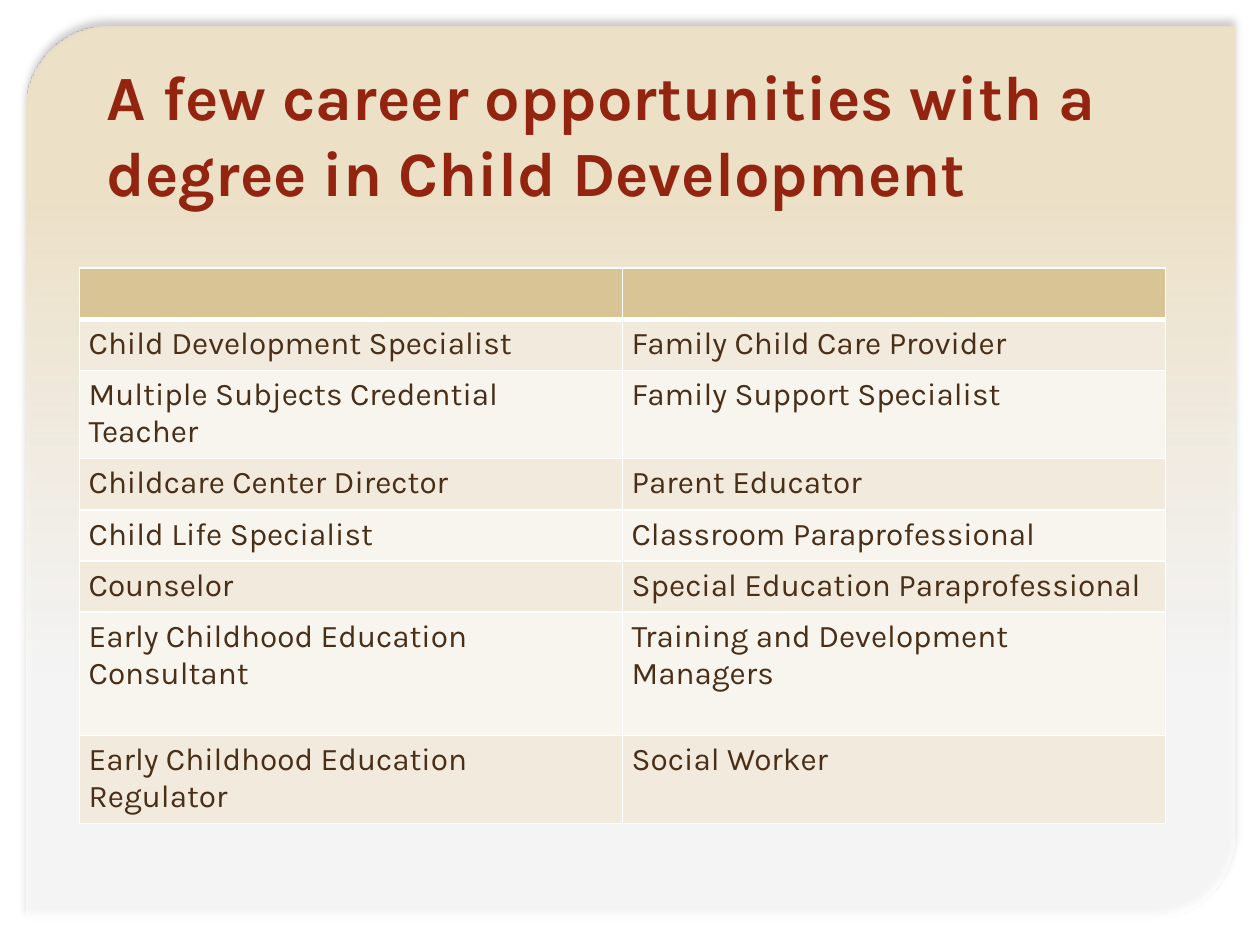
"""Build the slide of career opportunities for a Child Development degree."""
from typing import NamedTuple

import pptx
import pptx.dml.color
import pptx.enum.shapes
import pptx.enum.text
import pptx.oxml
import pptx.oxml.ns
import pptx.util

Pt = pptx.util.Pt
FONT = "Karla"
NAMESPACE = pptx.oxml.ns.nsdecls("a")
HEADER_FILL = "D9C495"
BAND_FILLS = ("F1EADD", "F8F5EF")


class CareerRow(NamedTuple):
    left: str
    right: str
    height: float = 29.25


CAREERS = [
    CareerRow("Child Development Specialist", "Family Child Care Provider"),
    CareerRow("Multiple Subjects Credential Teacher", "Family Support Specialist", 49.5),
    CareerRow("Childcare Center Director", "Parent Educator"),
    CareerRow("Child Life Specialist", "Classroom Paraprofessional"),
    CareerRow("Counselor", "Special Education Paraprofessional"),
    CareerRow("Early Childhood Education Consultant", "Training and Development Managers", 70.5),
    CareerRow("Early Childhood Education Regulator", "Social Worker", 49.5),
]


def color(value: str) -> pptx.dml.color.RGBColor:
    return pptx.dml.color.RGBColor.from_string(value)


def style_font(paragraph, size: float, value: str, bold: bool = False) -> None:
    paragraph.font.name = FONT
    paragraph.font.size = Pt(size)
    paragraph.font.bold = bold
    paragraph.font.color.rgb = color(value)


def add_panel(slide) -> None:
    panel = slide.shapes.add_shape(
        pptx.enum.shapes.MSO_SHAPE.ROUND_2_DIAG_RECTANGLE,
        Pt(15.12), Pt(15.12), Pt(690.5), Pt(510.5))
    panel.adjustments[0] = 0.094
    panel.adjustments[1] = 0
    panel.line.fill.background()
    properties = panel._element.spPr
    gradient = pptx.oxml.parse_xml(
        f'<a:gradFill {NAMESPACE} rotWithShape="1"><a:gsLst>'
        '<a:gs pos="19000"><a:srgbClr val="ECE0C6"/></a:gs>'
        '<a:gs pos="73000"><a:srgbClr val="FFFFFF"><a:alpha val="67000"/></a:srgbClr></a:gs>'
        '</a:gsLst><a:lin ang="5400000" scaled="0"/></a:gradFill>')
    properties.find(pptx.oxml.ns.qn("a:prstGeom")).addnext(gradient)
    properties.append(pptx.oxml.parse_xml(
        f'<a:effectLst {NAMESPACE}><a:outerShdw blurRad="{Pt(4.2)}" dist="{Pt(3)}" '
        'dir="16200000" algn="tl" rotWithShape="0"><a:srgbClr val="000000">'
        '<a:alpha val="20000"/></a:srgbClr></a:outerShdw></a:effectLst>'))


def add_title(slide, text: str) -> None:
    title = slide.shapes.add_textbox(Pt(54), Pt(41), Pt(597), Pt(82))
    frame = title.text_frame
    frame.word_wrap = True
    frame.vertical_anchor = pptx.enum.text.MSO_ANCHOR.BOTTOM
    frame.text = text
    style_font(frame.paragraphs[0], 36, "922410", bold=True)


def set_borders(cell, top: float, bottom: float) -> None:
    properties = cell._tc.get_or_add_tcPr()
    for side, width in (("L", 1), ("R", 1), ("T", top), ("B", bottom)):
        properties.append(pptx.oxml.parse_xml(
            f'<a:ln{side} {NAMESPACE} w="{Pt(width)}"><a:solidFill>'
            f'<a:srgbClr val="FFFFFF"/></a:solidFill></a:ln{side}>'))


def add_career_table(slide, careers: list[CareerRow]) -> None:
    rows = [CareerRow("", ""), *careers]
    height = sum(row.height for row in rows)
    table = slide.shapes.add_table(
        len(rows), 2, Pt(45.5), Pt(153.2), Pt(620.6), Pt(height)).table
    for column in table.columns:
        column.width = Pt(310.3)
    for index, row in enumerate(rows):
        table.rows[index].height = Pt(row.height)
        fill = BAND_FILLS[(index - 1) % 2] if index else HEADER_FILL
        for column_index, text in enumerate((row.left, row.right)):
            cell = table.cell(index, column_index)
            set_borders(cell, 3 if index == 1 else 1, 1 if index else 3)
            cell.fill.solid()
            cell.fill.fore_color.rgb = color(fill)
            cell.margin_left = cell.margin_right = Pt(5.2)
            cell.margin_top = cell.margin_bottom = Pt(3.6)
            cell.text = text
            style_font(cell.text_frame.paragraphs[0], 18, "492F18")


def main() -> None:
    presentation = pptx.Presentation()
    presentation.slide_width = Pt(720)
    presentation.slide_height = Pt(540)
    slide = presentation.slides.add_slide(presentation.slide_layouts[6])
    add_panel(slide)
    add_title(slide, "A few career opportunities with a degree in Child Development")
    add_career_table(slide, CAREERS)
    presentation.save("out.pptx")


if __name__ == "__main__":
    main()
